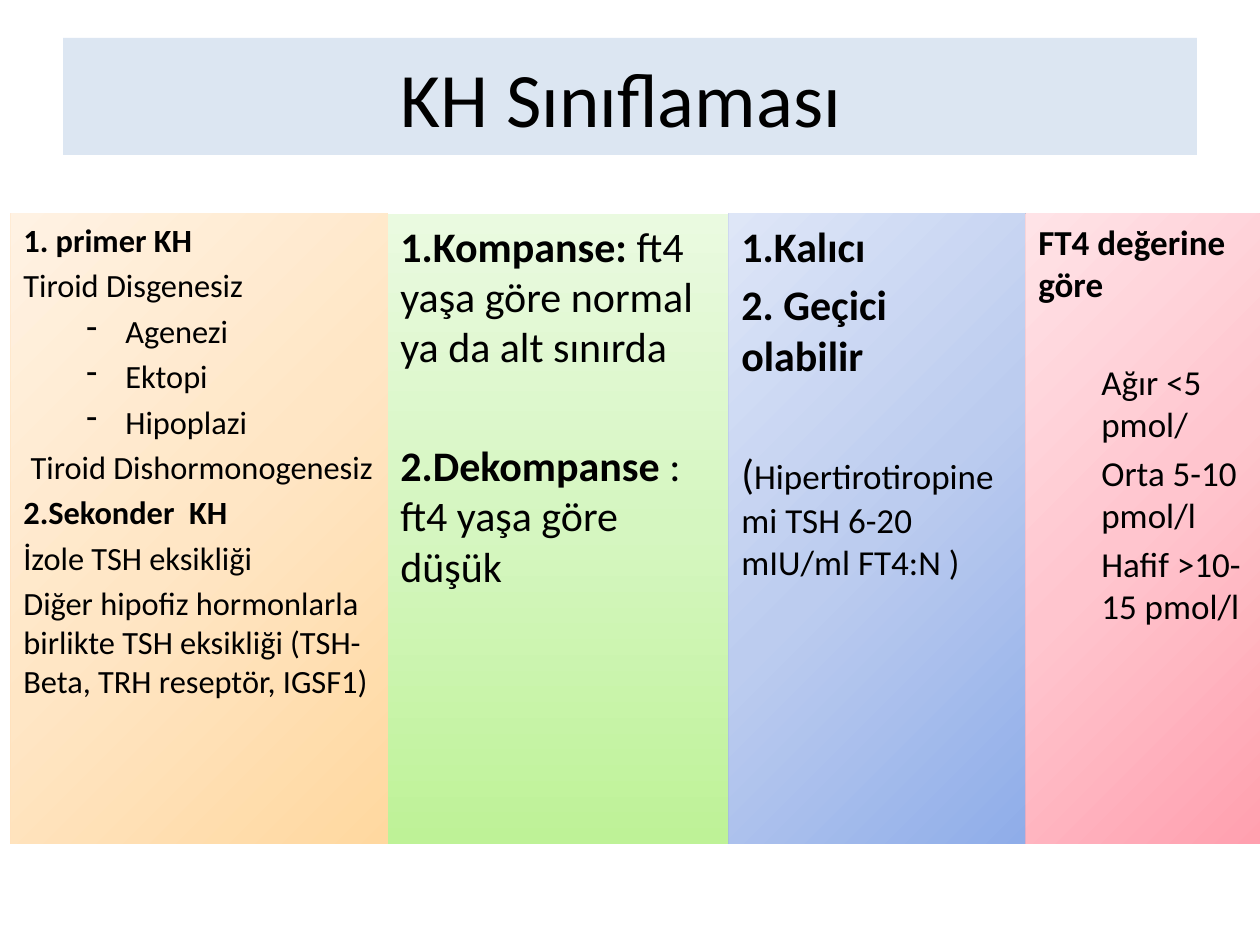
"""Build the KH classification slide: a title bar above four gradient columns."""
from copy import deepcopy

from lxml import etree
from pptx import Presentation
from pptx import util as u
from pptx.dml.color import RGBColor
from pptx.enum import text
from pptx.oxml.ns import qn

PX = 914400 // 126
FONT = "Calibri"
COLORS = {
    "text": "000000", "bar": "DCE6F2",
    "orange": ("FFD8A0", "FFE6C5", "FFF2E3"),
    "green": ("BEF297", "D5F6C0", "EAFAE0"),
    "blue": ("8FADE9", "BCCCEF", "DEE6F7"),
    "pink": ("FFA0AF", "FFC5CE", "FFE3E7"),
}
TITLE = "KH Sınıflaması "
TOP, HEIGHT = 214, 630
EDGES = (11, 388, 729, 1026, 1260)
INDENTS = {"plain": (0, 0), "dash": (102, -39), "inset": (63, 0)}

# Paragraph: (style, gap above, runs); run: (words, bold[, size])
COLUMNS = [
    {"color": "orange", "angle": 135, "size": 18.5, "body": [
        ("plain", False, [("1. primer KH", True)]),
        ("plain", False, [("Tiroid Disgenesiz", False)]),
        ("dash", False, [("Agenezi", False)]),
        ("dash", False, [("Ektopi", False)]),
        ("dash", False, [("Hipoplazi", False)]),
        ("plain", False, [(" Tiroid Dishormonogenesiz", False)]),
        ("plain", False, [("2.Sekonder  KH", True)]),
        ("plain", False, [("İzole TSH eksikliği", False)]),
        ("plain", False, [("Diğer hipofiz hormonlarla birlikte TSH eksikliği "
                           "(TSH-Beta, TRH reseptör, IGSF1)", False)]),
    ]},
    {"color": "green", "angle": 90, "size": 24, "body": [
        ("plain", False, [("1.Kompanse: ", True),
                          ("ft4 yaşa göre normal ya da alt sınırda", False)]),
        ("plain", True, [("2.Dekompanse ", True), (": ft4 yaşa göre düşük", False)]),
    ]},
    {"color": "blue", "angle": 135, "size": 24, "body": [
        ("plain", False, [("1.Kalıcı", True)]),
        ("plain", False, [("2. Geçici olabilir", True)]),
        ("plain", True, [("(", False),
                         ("Hipertirotiropinemi TSH 6-20 mIU/ml FT4:N )", False, 20)]),
    ]},
    {"color": "pink", "angle": 135, "size": 20, "body": [
        ("plain", False, [("FT4 değerine göre", True)]),
        ("inset", True, [("Ağır <5 pmol/", False)]),
        ("inset", False, [("Orta 5-10 pmol/l", False)]),
        ("inset", False, [("Hafif >10-15 pmol/l", False)]),
    ]},
]


def add_run(paragraph, words, size, bold=False):
    run = paragraph.add_run()
    run.text = words
    run.font.name, run.font.size, run.font.bold = FONT, u.Pt(size), bold
    run.font.color.rgb = RGBColor.from_string(COLORS["text"])


def fill_gradient(fill, hexes, angle):
    fill.gradient()
    fill.gradient_angle = angle
    first = fill.gradient_stops[0]
    stop_list = fill._fill._gradFill.find(qn("a:gsLst"))
    stop_list.insert(1, deepcopy(stop_list[0]))
    for index, (stop, color) in enumerate(zip(fill.gradient_stops, hexes)):
        stop.position = index / 2
        stop.color.rgb = RGBColor.from_string(color)


def indent(paragraph, style):
    left, first = INDENTS[style]
    props = paragraph._p.get_or_add_pPr()
    props.set("marL", str(left * PX))
    props.set("indent", str(first * PX))
    if style == "dash":
        etree.SubElement(props, qn("a:buChar")).set("char", "-")


def add_column(slide, left, right, column):
    box = slide.shapes.add_textbox(left * PX, TOP * PX, (right - left) * PX, HEIGHT * PX)
    fill_gradient(box.fill, COLORS[column["color"]], column["angle"])
    frame = box.text_frame
    frame.word_wrap = True
    frame.auto_size = text.MSO_AUTO_SIZE.NONE
    size = column["size"]
    for index, (style, gap, runs) in enumerate(column["body"]):
        paragraph = frame.add_paragraph() if index else frame.paragraphs[0]
        paragraph.space_before = u.Pt(round(size * (1.62 if gap else 0.2), 1))
        indent(paragraph, style)
        for words, bold, *own_size in runs:
            add_run(paragraph, words, own_size[0] if own_size else size, bold)


def main():
    deck = Presentation()
    deck.slide_width, deck.slide_height = 1260 * PX, 945 * PX
    slide = deck.slides.add_slide(deck.slide_layouts[5])

    title = slide.shapes.title
    title.left, title.top, title.width, title.height = (n * PX for n in (63, 38, 1134, 117))
    title.fill.solid()
    title.fill.fore_color.rgb = RGBColor.from_string(COLORS["bar"])
    title.text_frame.vertical_anchor = text.MSO_ANCHOR.MIDDLE
    heading = title.text_frame.paragraphs[0]
    heading.alignment = text.PP_ALIGN.CENTER
    add_run(heading, TITLE, 44)

    for left, right, column in zip(EDGES, EDGES[1:], COLUMNS):
        add_column(slide, left, right, column)
    deck.save("out.pptx")


if __name__ == "__main__":
    main()
